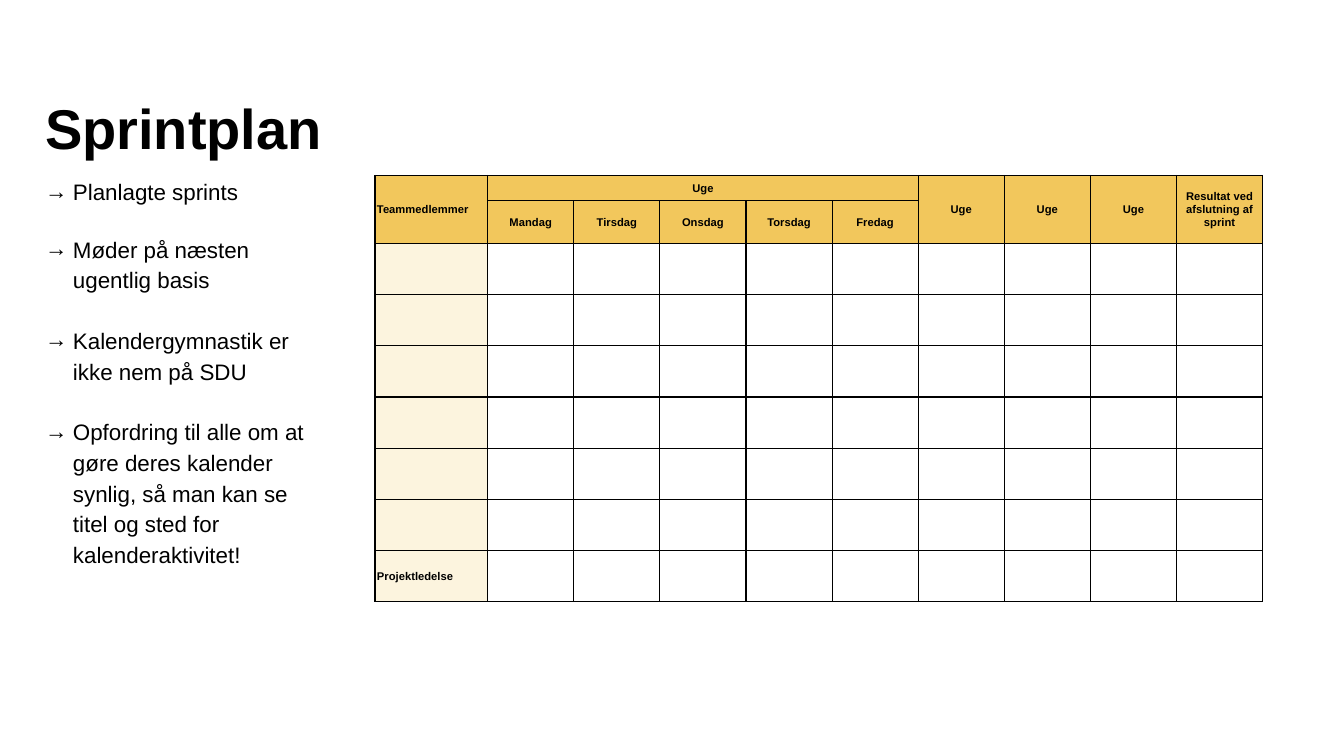
from lxml import etree
from pptx import Presentation
from pptx import util as u
from pptx.dml.color import RGBColor
from pptx.enum import text as t
from pptx.oxml import parse_xml
from pptx.oxml.ns import nsdecls, qn

INK, GOLD, CREAM = "000000", "F2C75C", "FCF4DE"


def hue(code):
    return RGBColor.from_string(code)


def write(par, words, size=8, bold=False, align=None, line=None, gap=0, mark=None):
    if mark:
        props = par._p.get_or_add_pPr()
        props.set("marL", str(u.Cm(0.7)))
        props.set("indent", str(-u.Cm(0.7)))
        etree.SubElement(props, qn("a:buFont")).set("typeface", "Arial")
        etree.SubElement(props, qn("a:buChar")).set("char", mark)
    par.alignment = align
    if line:
        par.line_spacing = line
    if gap:
        par.space_before = u.Pt(gap)
    run = par.add_run()
    run.text = words
    run.font.name = "Arial"
    run.font.size = u.Pt(size)
    run.font.bold = bold
    run.font.color.rgb = hue(INK)


deck = Presentation()
deck.slide_width, deck.slide_height = u.Cm(33.87), u.Cm(19.05)
slide = deck.slides.add_slide(deck.slide_layouts[6])

frames = []
for top, wide, high, anchor in [
    (2.08, 9.17, 1.96, t.MSO_ANCHOR.BOTTOM),
    (4.39, 6.96, 11.89, t.MSO_ANCHOR.TOP),
]:
    box = slide.shapes.add_textbox(u.Cm(1.14), u.Cm(top), u.Cm(wide), u.Cm(high))
    frame = box.text_frame
    frame.word_wrap = True
    frame.vertical_anchor = anchor
    frame.margin_left = frame.margin_right = 0
    frame.margin_top = frame.margin_bottom = 0
    frames.append(frame)

title, body = frames
write(title.paragraphs[0], "Sprintplan", size=40, bold=True, line=1.15)

points = [
    ("Planlagte sprints", 0),
    ("Møder på næsten ugentlig basis", 19),
    ("Kalendergymnastik er ikke nem på SDU", 21),
    ("Opfordring til alle om at gøre deres kalender synlig, "
     "så man kan se titel og sted for kalenderaktivitet!", 21),
]
for i, (words, gap) in enumerate(points):
    par = body.add_paragraph() if i else body.paragraphs[0]
    write(par, words, size=16, line=1.15, gap=gap, mark="→")

cols = [2.84] + [2.17] * 9
rows = [0.64] * 2 + [1.29] * 7
plan = slide.shapes.add_table(
    len(rows), len(cols), u.Cm(9.45), u.Cm(4.42), u.Cm(sum(cols)), u.Cm(sum(rows))
).table
plan.first_row = plan.horz_banding = False
for col, wide in zip(plan.columns, cols):
    col.width = u.Cm(wide)
for row, high in zip(plan.rows, rows):
    row.height = u.Cm(high)

for r in range(len(rows)):
    for c in range(len(cols)):
        cell = plan.cell(r, c)
        props = cell._tc.get_or_add_tcPr()
        for side in "LRTB":
            props.append(parse_xml(
                f'<a:ln{side} {nsdecls("a")} w="12700"><a:solidFill>'
                f'<a:srgbClr val="{INK}"/></a:solidFill></a:ln{side}>'
            ))
        if r < 2 or c == 0:
            cell.fill.solid()
            cell.fill.fore_color.rgb = hue(GOLD if r < 2 else CREAM)
        else:
            cell.fill.background()

plan.cell(0, 1).merge(plan.cell(0, 5))
for c in [0, 6, 7, 8, 9]:
    plan.cell(0, c).merge(plan.cell(1, c))

heads = {0: "Teammedlemmer", 1: "Uge", 6: "Uge", 7: "Uge", 8: "Uge",
         9: "Resultat ved afslutning af sprint"}
days = ["Mandag", "Tirsdag", "Onsdag", "Torsdag", "Fredag"]
labels = [(0, c, words) for c, words in heads.items()]
labels += [(1, c, day) for c, day in enumerate(days, 1)]
labels.append((8, 0, "Projektledelse"))
for r, c, words in labels:
    cell = plan.cell(r, c)
    cell.vertical_anchor = t.MSO_ANCHOR.MIDDLE
    cell.margin_left = cell.margin_right = u.Cm(0.05)
    cell.margin_top = cell.margin_bottom = u.Cm(0.03)
    align = t.PP_ALIGN.CENTER if c else t.PP_ALIGN.LEFT
    write(cell.text_frame.paragraphs[0], words, bold=True, align=align)

deck.save("out.pptx")
